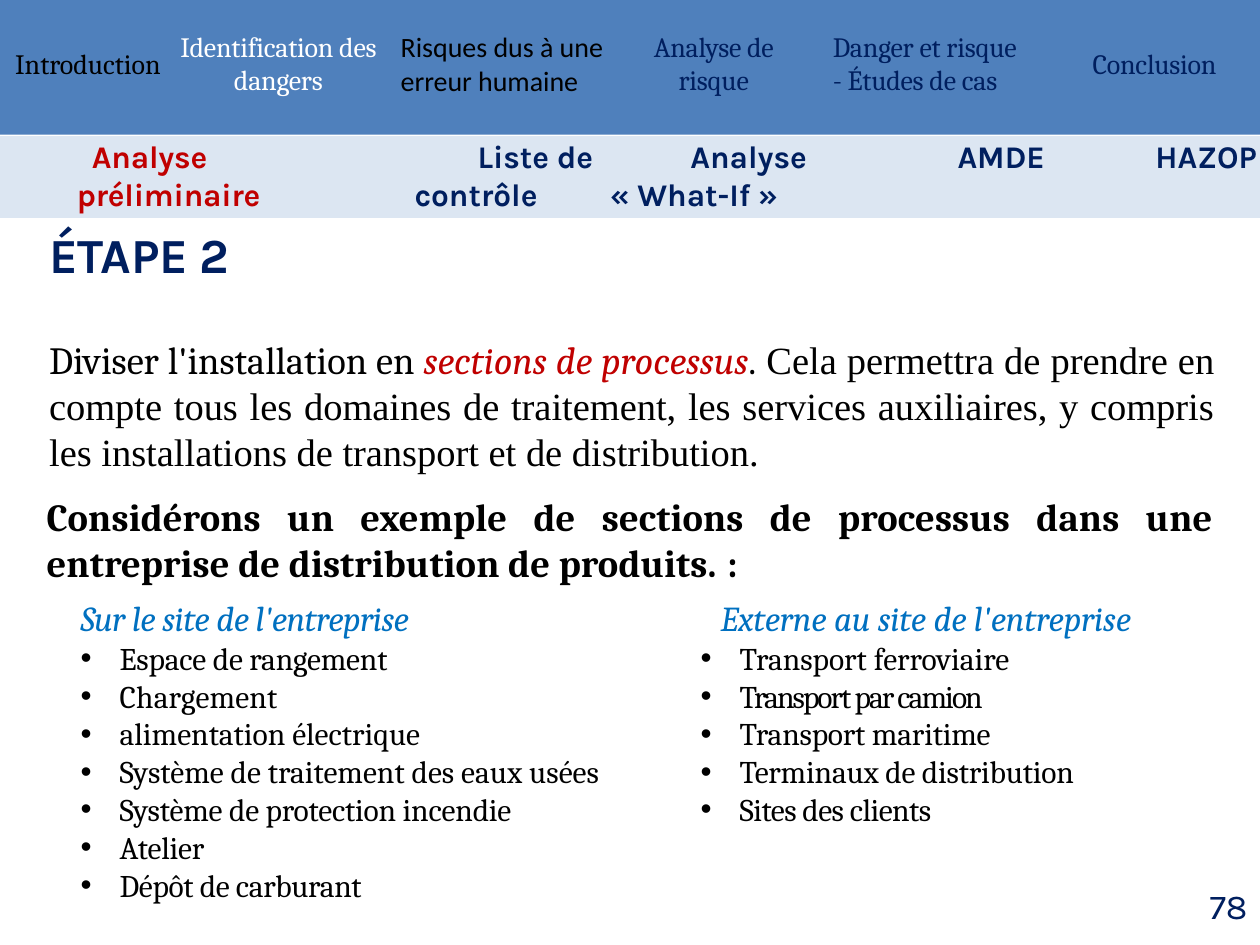
from lxml import etree
from pptx import Presentation
from pptx.dml.color import RGBColor
from pptx.enum.shapes import MSO_SHAPE
from pptx.enum.text import MSO_ANCHOR, PP_ALIGN
from pptx.oxml.ns import qn
from pptx.util import Inches, Pt

RECT = MSO_SHAPE.RECTANGLE
MIDDLE = MSO_ANCHOR.MIDDLE
LEFT, CENTER, JUSTIFY = PP_ALIGN.LEFT, PP_ALIGN.CENTER, PP_ALIGN.JUSTIFY
NO_GRID = "{2D5ABB26-0587-4C30-8999-92F81FD0307C}"
COLORS = {
    "bar": "4F80BC",
    "band": "DCE6F2",
    "navy": "001F5F",
    "red": "C00000",
    "blue": "0070C0",
    "black": "000000",
    "white": "FFFFFF",
}


def rgb(name):
    return RGBColor.from_string(COLORS[name])


def run(text, color="black", size=22, font="Cambria", gap=0, bold=False, italic=False):
    """Describe one run; gap is the letter spacing in points."""
    return text, color, size, font, gap, bold, italic


def para(*runs, align=LEFT, indent=0, before=0, tabs=(), bullet=False):
    return runs, align, indent, before, tabs, bullet


class Deck:
    """Holds the style and the current slide."""

    def __init__(self):
        self.prs = Presentation()
        self.prs.slide_width, self.prs.slide_height = Inches(10), Inches(7.5)
        self.slide = self.prs.slides.add_slide(self.prs.slide_layouts[6])

    def band(self, top, height, color):
        shape = self.slide.shapes.add_shape(
            RECT, 0, Inches(top), Inches(10), Inches(height))
        shape.shadow.inherit = False
        shape.fill.solid()
        shape.fill.fore_color.rgb = rgb(color)
        shape.line.fill.background()

    def fill(self, frame, paras):
        frame.word_wrap = True
        for i, (runs, align, indent, before, tabs, bullet) in enumerate(paras):
            p = frame.add_paragraph() if i else frame.paragraphs[0]
            p.alignment = align
            p.space_before = Pt(before)
            props = p._p.get_or_add_pPr()
            props.set("marL", str(Inches(indent)))
            if bullet:
                props.set("indent", str(Inches(-0.31)))
                etree.SubElement(props, qn("a:buFont"), typeface="Arial")
                etree.SubElement(props, qn("a:buChar"), char="•")
            if tabs:
                stops = etree.SubElement(props, qn("a:tabLst"))
                for pos in tabs:
                    etree.SubElement(stops, qn("a:tab"), pos=str(Inches(pos)), algn="l")
            for item in runs:
                self.run(p, *item)

    def run(self, p, text, color, size, font, gap, bold, italic):
        r = p.add_run()
        r.text = text
        r.font.name, r.font.size = font, Pt(size)
        r.font.bold, r.font.italic = bold, italic
        r.font.color.rgb = rgb(color)
        if gap:
            r._r.get_or_add_rPr().set("spc", str(round(gap * 100)))

    def text(self, left, top, width, height, paras):
        box = self.slide.shapes.add_textbox(
            Inches(left), Inches(top), Inches(width), Inches(height))
        frame = box.text_frame
        frame.margin_left = frame.margin_right = 0
        frame.margin_top = frame.margin_bottom = 0
        self.fill(frame, paras)

    def bullets(self, left, width, height, items):
        self.text(left, 5.07, width, height, [
            para(run(text, size=18, gap=gap), indent=0.33, tabs=[0.33], bullet=True)
            for text, gap in items])

    def menu(self, left, top, height, widths, cells, color):
        """Add a one-row table whose cells are lists of paragraphs."""
        table = self.slide.shapes.add_table(
            1, len(cells), Inches(left), Inches(top),
            Inches(sum(widths)), Inches(height)).table
        table.first_row = table.horz_banding = False
        table._tbl.tblPr.find(qn("a:tableStyleId")).text = NO_GRID
        table.rows[0].height = Inches(height)
        for i, (width, paras) in enumerate(zip(widths, cells)):
            table.columns[i].width = Inches(width)
            cell = table.cell(0, i)
            cell.margin_left = cell.margin_right = 0
            cell.margin_top = cell.margin_bottom = 0
            cell.vertical_anchor = MIDDLE
            cell.fill.solid()
            cell.fill.fore_color.rgb = rgb(color)
            self.fill(cell.text_frame, paras)


def label(text, color="navy", font="Cambria", gap=-0.1, **layout):
    return para(run(text, color, 16, font, gap), **layout)


def method(text, color="navy", gap=0):
    return run(text, color, 18, "Karla", gap, bold=True)


def main():
    deck = Deck()
    deck.band(0, 1.07, "bar")

    deck.text(0.36, 1.78, 9.28, 3.28, [
        para(run("ÉTAPE 2", "navy", 28, "Karla", -0.2, bold=True), indent=0.03),
        para(run("Diviser l'installation en "),
             run("sections de processus", "red", italic=True),
             run("."),
             run(" Cela permettra de prendre en compte tous les domaines de "
                 "traitement, les services auxiliaires, y compris les installations "
                 "de transport et de distribution.", font="Times New Roman"),
             align=JUSTIFY, indent=0.03, before=30),
        para(run("Considérons un exemple de sections de processus dans une "
                 "entreprise de distribution de produits. ", gap=0.1, bold=True),
             run(":", gap=-0.1, bold=True),
             align=JUSTIFY, indent=0.01, before=10.8),
        para(run("\tSur le site de l'entreprise", "blue", 20, gap=-0.3, italic=True),
             run("\tExterne au site de l'entreprise", "blue", 20, gap=-0.1, italic=True),
             before=6.5, tabs=[0.28, 5.36]),
    ])

    deck.bullets(0.62, 4.53, 2.12, [
        ("Espace de rangement", -0.1),
        ("Chargement", 0.1),
        ("alimentation électrique", 0),
        ("Système de traitement des eaux usées", 0),
        ("Système de protection incendie", -0.1),
        ("Atelier", -0.1),
        ("Dépôt de carburant", -0.2),
    ])
    deck.bullets(5.54, 3.52, 1.51, [
        ("Transport ferroviaire", 0),
        ("Transport par camion", -1.1),
        ("Transport maritime", -0.1),
        ("Terminaux de distribution", -0.1),
        ("Sites des clients", -0.3),
    ])
    deck.text(9.57, 7.02, 0.36, 0.34, [
        para(run("78", "navy", 20, "Karla"), indent=0.03)])

    deck.menu(0.08, 0.18, 0.67, [1.33, 1.6, 1.94, 1.42, 2.03, 1.52], [
        [label("Introduction", "black", gap=0, indent=0.04)],
        [label("Identification des dangers", "white", align=CENTER)],
        [label("Risques dus à une erreur humaine", "black", "Calibri", 0, indent=0.17)],
        [label("Analyse de risque", align=CENTER, indent=0.01)],
        [label("Danger et risque", indent=0.24),
         label("- Études de cas", indent=0.24)],
        [label("Conclusion", align=CENTER, indent=0.01)],
    ], "bar")

    deck.band(1.08, 0.65, "band")
    deck.text(0, 1.09, 10, 0.61, [
        para(method("\tAnalyse", "red", -0.1),
             method("\tListe de\tAnalyse\tAMDE\tHAZOP"),
             tabs=[0.73, 3.79, 5.48, 7.6, 9.17]),
        para(method("\tpréliminaire", "red", -0.1),
             method("\tcontrôle\t« What-If »"),
             tabs=[0.61, 3.29, 4.84]),
    ])
    deck.prs.save("out.pptx")


if __name__ == "__main__":
    main()
